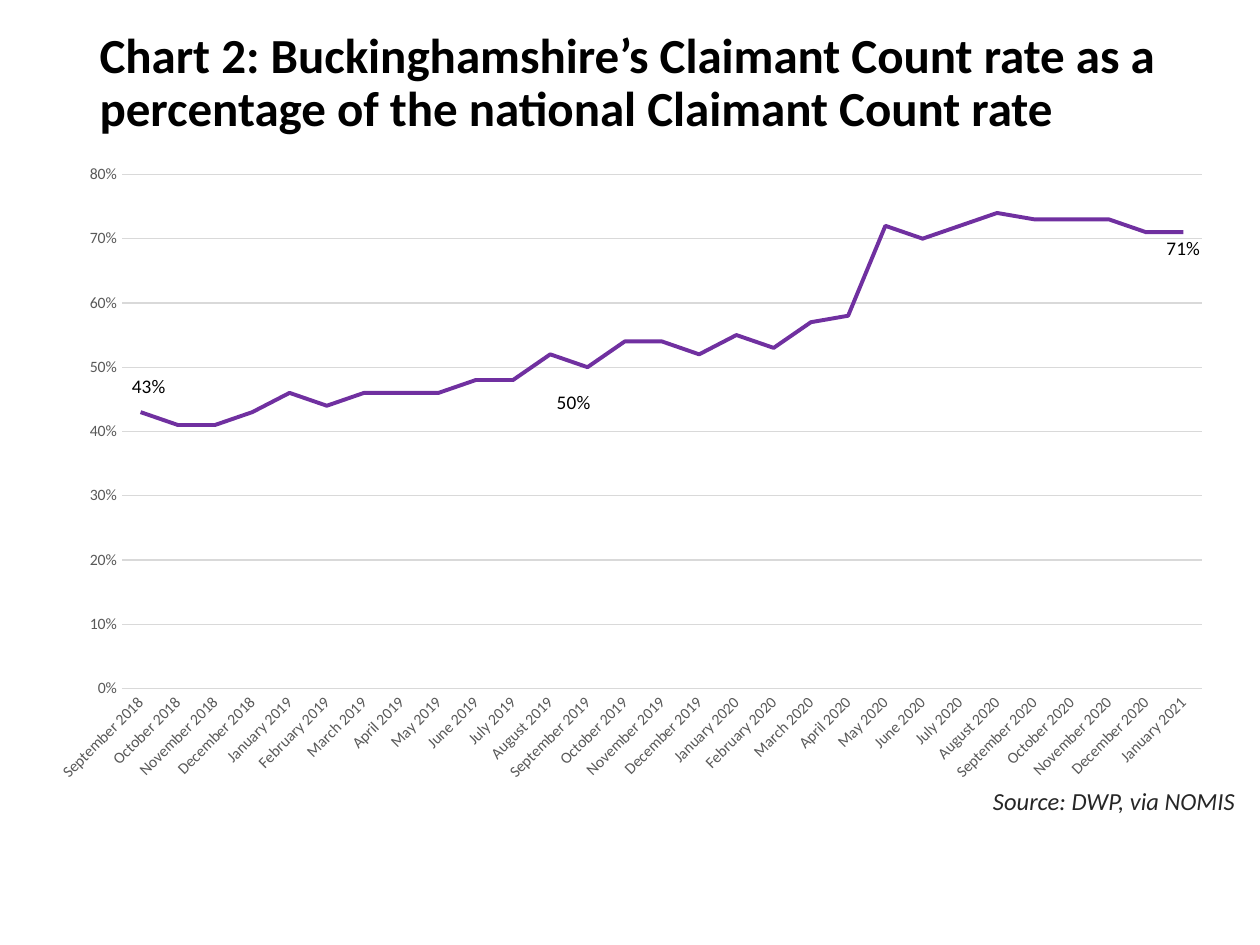
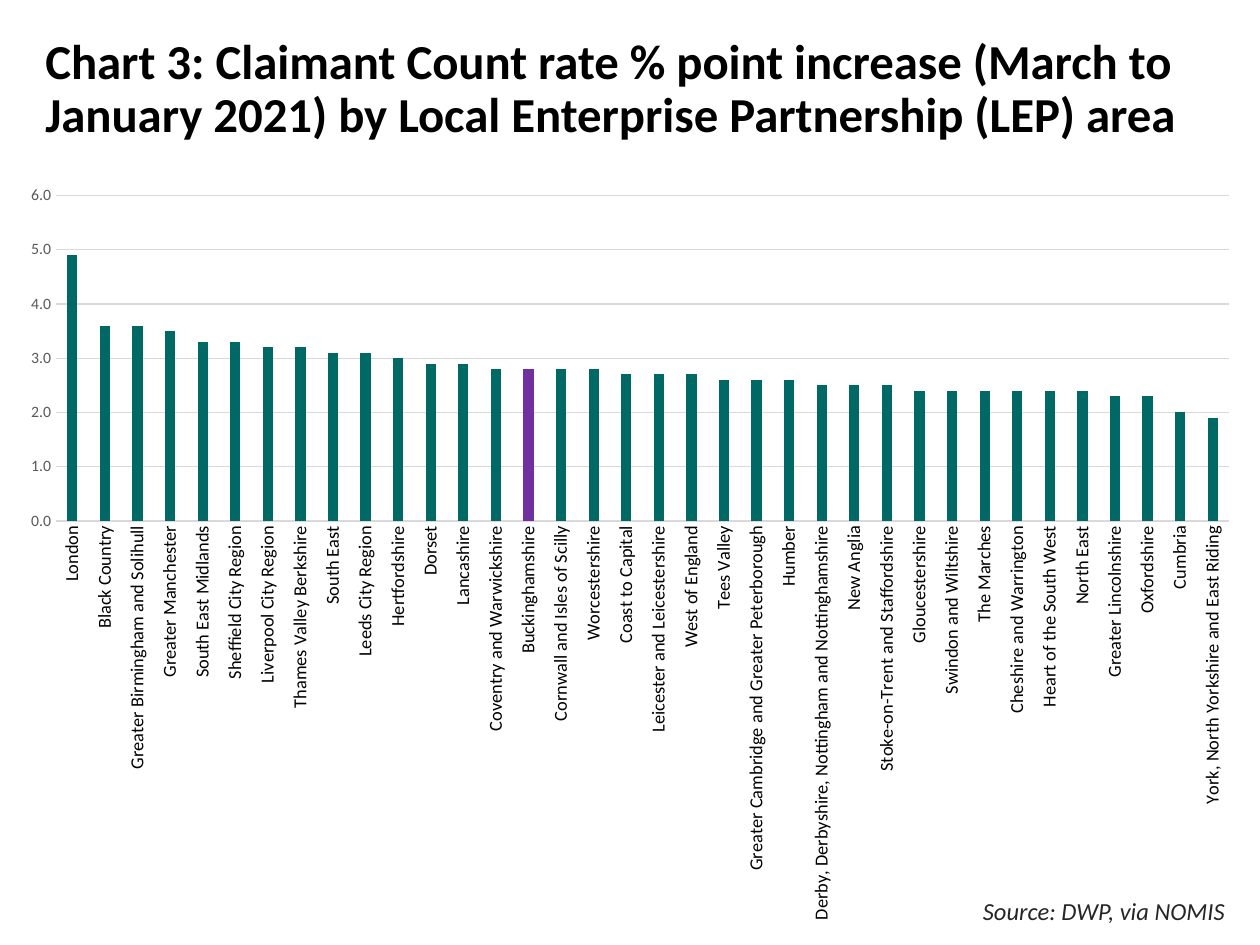
from dataclasses import dataclass
from itertools import islice, product

from lxml.etree import SubElement
from pptx import Presentation
from pptx.chart.data import CategoryChartData
from pptx.dml.color import RGBColor
from pptx.enum.chart import XL_CHART_TYPE as ChartType
from pptx.enum.chart import XL_LABEL_POSITION as LabelPosition
from pptx.enum.chart import XL_TICK_MARK as TickMark
from pptx.enum.text import MSO_ANCHOR as Anchor
from pptx.enum.text import MSO_AUTO_SIZE as AutoSize
from pptx.enum.text import PP_ALIGN as Align
from pptx.oxml.ns import qn
from pptx.util import Inches, Pt

SLIDE_WIDTH, SLIDE_HEIGHT = Inches(10), Inches(7.5)
COLUMNS, ROWS = 100, 75


@dataclass(frozen=True)
class Theme:
    font: str = "Calibri"
    black: str = "000000"
    source_grey: str = "262626"
    axis_grey: str = "595959"
    grid_grey: str = "D9D9D9"
    purple: str = "7030A0"
    teal: str = "006965"
    title_size: float = 28
    long_title_size: float = 27.9
    source_size: float = 14
    chart_size: float = 10
    axis_size: float = 9
    area_size: float = 10.5
    label_size: float = 11


THEME = Theme()


@dataclass(frozen=True)
class Frame:
    """A box in grid columns and rows."""
    left: float
    top: float
    width: float
    height: float

    def emu(self) -> tuple[int, int, int, int]:
        column, row = SLIDE_WIDTH / COLUMNS, SLIDE_HEIGHT / ROWS
        return (round(self.left * column), round(self.top * row),
                round(self.width * column), round(self.height * row))

    def shares_of(self, outer: "Frame") -> dict[str, float]:
        return {"x": (self.left - outer.left) / outer.width,
                "y": (self.top - outer.top) / outer.height,
                "w": self.width / outer.width,
                "h": self.height / outer.height}


@dataclass(frozen=True)
class ChartSpec:
    kind: ChartType
    frame: Frame
    plot: Frame
    categories: list[str]
    values: list[float]
    number_format: str
    maximum: float
    step: float
    category_size: float
    category_color: str
    category_angle: int


@dataclass(frozen=True)
class PointLabel:
    """A value label, moved by columns and rows from its place below the point."""
    index: int
    right: float = 0
    down: float = 0


def style_font(font, size: float, color: str, bold: bool = False, italic: bool = False) -> None:
    font.name, font.size = THEME.font, Pt(size)
    font.bold, font.italic = bold, italic
    font.color.rgb = RGBColor.from_string(color)


def style_line(line, color: str, width: float) -> None:
    line.color.rgb = RGBColor.from_string(color)
    line.width = Pt(width)


def add_layout(parent, position: int, **settings) -> None:
    """Give a chart part a manual layout as the child at the given position."""
    for old in parent.findall(qn("c:layout")):
        parent.remove(old)
    layout = SubElement(parent, qn("c:layout"))
    manual = SubElement(layout, qn("c:manualLayout"))
    for name, value in settings.items():
        SubElement(manual, qn(f"c:{name}")).set("val", str(value))
    parent.insert(position, layout)


def add_titled_slide(presentation, title: str, title_size: float,
                     title_frame: Frame, source_frame: Frame):
    slide = presentation.slides.add_slide(presentation.slide_layouts[5])
    shape = slide.shapes.title
    shape.left, shape.top, shape.width, shape.height = title_frame.emu()
    text_frame = shape.text_frame
    text_frame.text = title
    text_frame.auto_size = AutoSize.NONE
    text_frame.vertical_anchor = Anchor.MIDDLE
    paragraph = text_frame.paragraphs[0]
    paragraph.alignment, paragraph.line_spacing = Align.LEFT, 0.9
    style_font(paragraph.runs[0].font, title_size, THEME.black, bold=True)

    text_frame = slide.shapes.add_textbox(*source_frame.emu()).text_frame
    text_frame.word_wrap = True
    text_frame.text = "Source: DWP, via NOMIS"
    paragraph = text_frame.paragraphs[0]
    paragraph.alignment = Align.RIGHT
    style_font(paragraph.runs[0].font, THEME.source_size, THEME.source_grey, italic=True)
    return slide


def add_chart(slide, spec: ChartSpec):
    data = CategoryChartData(number_format=spec.number_format)
    data.categories = spec.categories
    data.add_series("Series 1", spec.values)
    chart = slide.shapes.add_chart(spec.kind, *spec.frame.emu(), data).chart
    chart.has_legend = chart.has_title = False
    style_font(chart.font, THEME.chart_size, THEME.black)
    plot_area = chart.plots[0]._element.getparent()
    add_layout(plot_area, 0, layoutTarget="inner", xMode="edge", yMode="edge",
               **spec.plot.shares_of(spec.frame))

    category_axis, value_axis = chart.category_axis, chart.value_axis
    for axis in (category_axis, value_axis):
        axis.major_tick_mark = axis.minor_tick_mark = TickMark.NONE
    style_font(category_axis.tick_labels.font, spec.category_size, spec.category_color)
    style_line(category_axis.format.line, THEME.grid_grey, 0.75)
    body = category_axis._element.xpath("c:txPr/a:bodyPr")[0]
    body.set("rot", str(spec.category_angle * 60000))
    body.set("vert", "horz")

    value_axis.minimum_scale, value_axis.maximum_scale = 0, spec.maximum
    value_axis.major_unit = spec.step
    value_axis.format.line.fill.background()
    style_line(value_axis.major_gridlines.format.line, THEME.grid_grey, 0.75)
    labels = value_axis.tick_labels
    labels.number_format, labels.number_format_is_linked = spec.number_format, False
    style_font(labels.font, THEME.axis_size, THEME.axis_grey)
    return chart


def label_points(series, point_labels: list[PointLabel], chart_frame: Frame) -> None:
    series.data_labels.show_value = False
    for leader_lines in series._element.xpath("c:dLbls/c:showLeaderLines"):
        leader_lines.set("val", "0")
    for point_label in point_labels:
        label = series.points[point_label.index].data_label
        style_font(label.font, THEME.label_size, THEME.black)
        label.position = LabelPosition.BELOW
        if point_label.right or point_label.down:
            element = series._element.xpath(
                f"c:dLbls/c:dLbl[c:idx/@val='{point_label.index}']")[0]
            add_layout(element, 1, x=point_label.right / chart_frame.width,
                       y=point_label.down / chart_frame.height)


def months_from_september_2018(count: int) -> list[str]:
    names = ["January", "February", "March", "April", "May", "June", "July",
             "August", "September", "October", "November", "December"]
    months = (f"{name} {year}" for year, name in product(range(2018, 2022), names))
    return list(islice(months, 8, 8 + count))


RATE_SHARES = [0.43, 0.41, 0.41, 0.43, 0.46, 0.44, 0.46, 0.46, 0.46, 0.48,
               0.48, 0.52, 0.5, 0.54, 0.54, 0.52, 0.55, 0.53, 0.57, 0.58,
               0.72, 0.7, 0.72, 0.74, 0.73, 0.73, 0.73, 0.71, 0.71]
RATE_LABELS = [PointLabel(0, 0.65, -3.3), PointLabel(12, -1.1, 1.5), PointLabel(28)]

AREA_INCREASES = {
    "London": 4.9,
    "Black Country": 3.6,
    "Greater Birmingham and Solihull": 3.6,
    "Greater Manchester": 3.5,
    "South East Midlands": 3.3,
    "Sheffield City Region": 3.3,
    "Liverpool City Region": 3.2,
    "Thames Valley Berkshire": 3.2,
    "South East": 3.1,
    "Leeds City Region": 3.1,
    "Hertfordshire": 3.0,
    "Dorset": 2.9,
    "Lancashire": 2.9,
    "Coventry and Warwickshire": 2.8,
    "Buckinghamshire": 2.8,
    "Cornwall and Isles of Scilly": 2.8,
    "Worcestershire": 2.8,
    "Coast to Capital": 2.7,
    "Leicester and Leicestershire": 2.7,
    "West of England": 2.7,
    "Tees Valley": 2.6,
    "Greater Cambridge and Greater Peterborough": 2.6,
    "Humber": 2.6,
    "Derby, Derbyshire, Nottingham and Nottinghamshire": 2.5,
    "New Anglia": 2.5,
    "Stoke-on-Trent and Staffordshire": 2.5,
    "Gloucestershire": 2.4,
    "Swindon and Wiltshire": 2.4,
    "The Marches": 2.4,
    "Cheshire and Warrington": 2.4,
    "Heart of the South West": 2.4,
    "North East": 2.4,
    "Greater Lincolnshire": 2.3,
    "Oxfordshire": 2.3,
    "Cumbria": 2.0,
    "York, North Yorkshire and East Riding": 1.9,
}


def build_rate_slide(presentation) -> None:
    slide = add_titled_slide(
        presentation,
        "Chart 2: Buckinghamshire’s Claimant Count rate as a percentage "
        "of the national Claimant Count rate",
        THEME.title_size, Frame(6.9, 1.55, 86.2, 10.2), Frame(75.2, 61.9, 23.8, 3.4))
    spec = ChartSpec(
        ChartType.LINE, Frame(2.7, 12.1, 94.5, 50.9), Frame(9.68, 13.85, 85.72, 40.8),
        months_from_september_2018(len(RATE_SHARES)), RATE_SHARES, "0%", 0.8, 0.1,
        THEME.axis_size, THEME.axis_grey, -45)
    series = add_chart(slide, spec).plots[0].series[0]
    series.smooth = False
    style_line(series.format.line, THEME.purple, 2.25)
    label_points(series, RATE_LABELS, spec.frame)


def build_area_slide(presentation) -> None:
    slide = add_titled_slide(
        presentation,
        "Chart 3: Claimant Count rate % point increase (March to January 2021) "
        "by Local Enterprise Partnership (LEP) area",
        THEME.long_title_size, Frame(2.6, 2.05, 94.8, 10.2), Frame(74.4, 70.6, 23.8, 3.4))
    areas = list(AREA_INCREASES)
    chart = add_chart(slide, ChartSpec(
        ChartType.COLUMN_CLUSTERED, Frame(0.4, 13.6, 99.1, 60.7),
        Frame(4.45, 15.52, 93.1, 25.83),
        areas, list(AREA_INCREASES.values()), "#,##0.0", 6, 1,
        THEME.area_size, THEME.black, -90))
    plot = chart.plots[0]
    plot.gap_width, plot.overlap, plot.vary_by_categories = 219, -27, False
    series = plot.series[0]
    highlight = series.points[areas.index("Buckinghamshire")]
    for bar, color in ((series, THEME.teal), (highlight, THEME.purple)):
        bar.format.fill.solid()
        bar.format.fill.fore_color.rgb = RGBColor.from_string(color)


def main() -> None:
    presentation = Presentation()
    presentation.slide_width, presentation.slide_height = SLIDE_WIDTH, SLIDE_HEIGHT
    build_rate_slide(presentation)
    build_area_slide(presentation)
    presentation.save("out.pptx")


if __name__ == "__main__":
    main()
